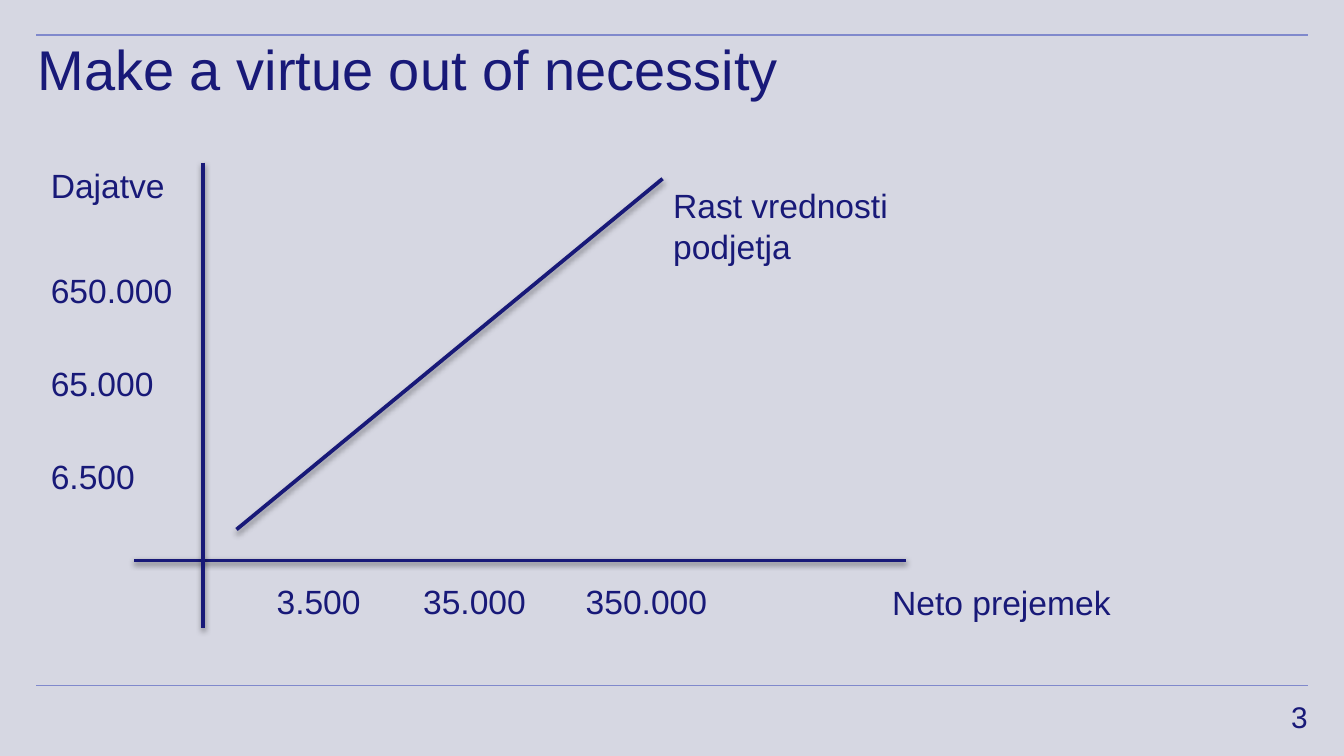
import pptx
import pptx.util
import pptx.dml.color
import pptx.enum.shapes
import pptx.enum.text
import pptx.oxml
import pptx.oxml.ns
from dataclasses import dataclass

Inches, Pt = pptx.util.Inches, pptx.util.Pt
ALIGN = pptx.enum.text.PP_ALIGN
ANCHOR = pptx.enum.text.MSO_ANCHOR


@dataclass(frozen=True)
class Theme:
    background: str = "D6D7E2"
    ink: str = "181978"
    rule: str = "8089CC"
    font: str = "Arial"
    title: int = 30
    label: int = 18
    number: int = 16
    rule_width: float = 0.75
    axis_width: float = 2


THEME = Theme()
NS = pptx.oxml.ns.nsdecls("a")
NO_EFFECT = f"<a:effectLst {NS}/>"
SOFT_SHADOW = (
    f'<a:effectLst {NS}><a:outerShdw blurRad="{Pt(3.1)}" dist="{Pt(1.6)}" '
    'dir="5400000" rotWithShape="0"><a:srgbClr val="000000">'
    '<a:alpha val="38000"/></a:srgbClr></a:outerShdw></a:effectLst>'
)


def rgb(value):
    return pptx.dml.color.RGBColor.from_string(value)


def add_text(s, box, text, size, align=ALIGN.LEFT, anchor=ANCHOR.TOP, inset=None):
    tf = s.shapes.add_textbox(*map(Inches, box)).text_frame
    frame_format = {"word_wrap": True, "vertical_anchor": anchor}
    if inset is not None:
        for side in ("left", "top", "right", "bottom"):
            frame_format[f"margin_{side}"] = Inches(inset)
    for name, value in frame_format.items():
        setattr(tf, name, value)
    p = tf.paragraphs[0]
    p.alignment = align
    r = p.add_run()
    r.text = text
    for name, value in {"name": THEME.font, "size": Pt(size)}.items():
        setattr(r.font, name, value)
    r.font.color.rgb = rgb(THEME.ink)


def add_line(s, start, end, color, width, effect=NO_EFFECT):
    line = s.shapes.add_connector(
        pptx.enum.shapes.MSO_CONNECTOR.STRAIGHT, *map(Inches, (*start, *end)))
    line.line.color.rgb = rgb(color)
    line.line.width = Pt(width)
    line._element.spPr.append(pptx.oxml.parse_xml(effect))


def add_frame(s, box, title, number):
    """Rules above and below the content, title and page number."""
    x, y, w, h = box
    for rule_y in (y + h, y):
        add_line(s, (x, rule_y), (x + w, rule_y), THEME.rule, THEME.rule_width)
    add_text(s, (x + w - 0.58, y + h + 0.1, 0.58, 0.3), number, THEME.number,
             ALIGN.RIGHT, inset=0)
    add_text(s, (x + 0.01, y - 0.01, 6.68, 0.52), title, THEME.title,
             anchor=ANCHOR.MIDDLE, inset=0)


def add_diagram(s, box):
    """Axes, growth line and their labels."""
    x, y, w, h = box

    # Axes and growth line
    axis_x, axis_y = x + 1.23, y + 2.99
    for start, end in (
        ((x + 0.72, axis_y), (x + 6.46, axis_y)),
        ((axis_x, y + 0.03), (axis_x, y + h)),
        ((axis_x + 0.25, axis_y - 0.23), (axis_x + 3.42, axis_y - 2.84)),
    ):
        add_line(s, start, end, THEME.ink, THEME.axis_width, SOFT_SHADOW)

    # Vertical axis: name, then evenly spaced values
    add_text(s, (x, y, 1.33, 0.4), "Dajatve", THEME.label)
    for i, (value, width) in enumerate((("650.000", 1.33), ("65.000", 1.07),
                                        ("6.500", 1.33))):
        add_text(s, (x, y + 0.78 + i * 0.69, width, 0.4), value, THEME.label)

    # Horizontal axis: values, then name
    for dx, dy, width, label in ((1.68, 0.1, 1.33, "3.500"),
                                 (2.77, 0.1, 1.07, "35.000"),
                                 (3.98, 0.1, 1.33, "350.000"),
                                 (6.26, 0.11, 2.04, "Neto prejemek")):
        add_text(s, (x + dx, axis_y + dy, width, 0.4), label, THEME.label)

    # Growth line label
    add_text(s, (x + 4.63, y + 0.15, 2.51, 0.71), "Rast vrednosti podjetja", THEME.label)


def main():
    prs = pptx.Presentation()
    prs.slide_width = Inches(10)
    prs.slide_height = prs.slide_width * 9 // 16
    s = prs.slides.add_slide(prs.slide_layouts[6])
    s.background.fill.solid()
    s.background.fill.fore_color.rgb = rgb(THEME.background)
    add_frame(s, (0.27, 0.26, 9.46, 4.84), "Make a virtue out of necessity", "3")
    add_diagram(s, (0.28, 1.18, 8.3, 3.49))
    prs.save("out.pptx")


if __name__ == "__main__":
    main()
